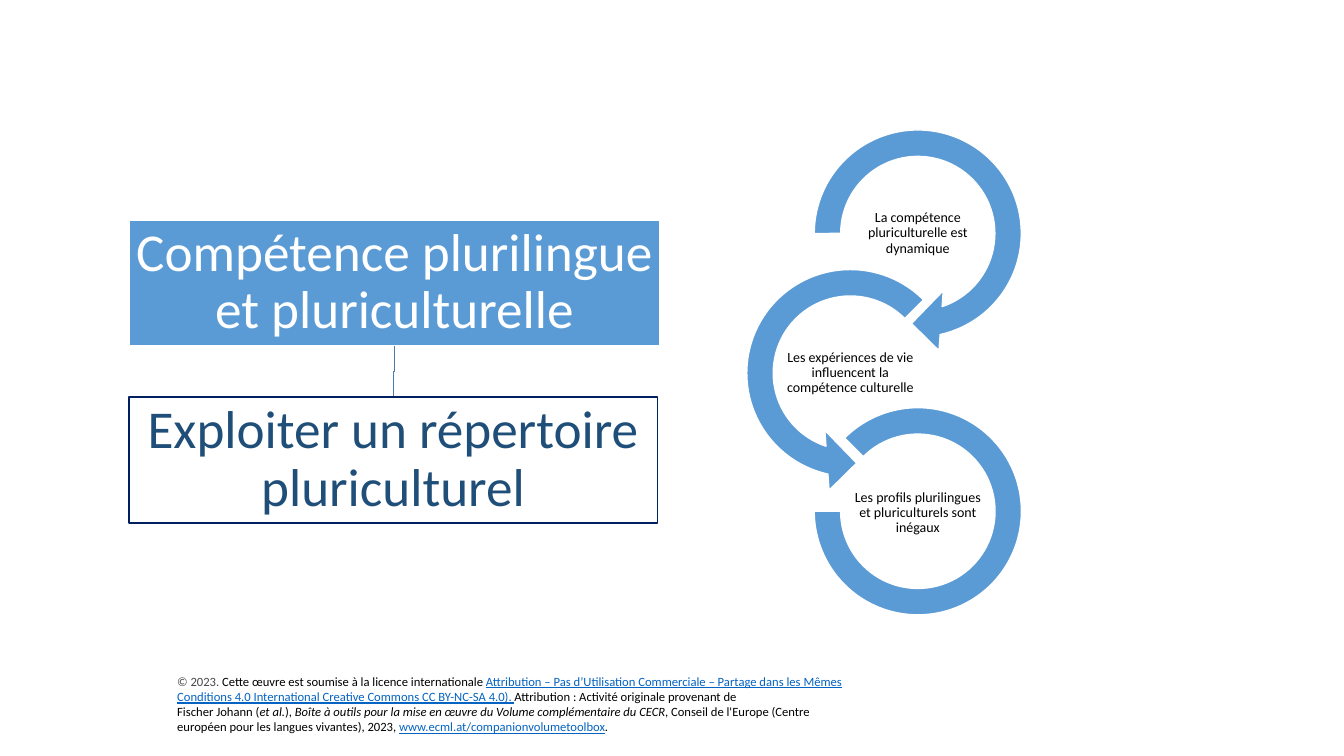
from lxml import etree
from pptx import Presentation
from pptx.dml.color import RGBColor
from pptx.enum.shapes import MSO_SHAPE as Preset
from pptx.enum.text import MSO_ANCHOR as Anchor, PP_ALIGN as Align
from pptx.util import Pt

BLUE = RGBColor(0x5B, 0x9B, 0xD5)
DARK_BLUE = RGBColor(0x1F, 0x4E, 0x79)
NAVY = RGBColor(0x00, 0x20, 0x60)
LINK_BLUE = RGBColor(0x05, 0x63, 0xC1)
LINE_BLUE = RGBColor(0x49, 0x7C, 0xAB)
GREY = RGBColor(0x46, 0x46, 0x46)
WHITE = RGBColor(0xFF, 0xFF, 0xFF)
BLACK = RGBColor(0x00, 0x00, 0x00)
FONT = "Calibri"

# text, top, width, fill, line, font colour
BOXES = [
    ("Compétence plurilingue et pluriculturelle", 157, 379.4, BLUE, WHITE, WHITE),
    ("Exploiter un répertoire pluriculturel", 283.7, 377.3, WHITE, NAVY, DARK_BLUE),
]
BOX_LEFT, BOX_HEIGHT = 92.2, 90

# text, preset, diameter, centre x, vertical shift, adjustments
RINGS = [
    ("La compétence pluriculturelle est dynamique",
     Preset.CIRCULAR_ARROW, 172, 655.6, 0, (0.1098, 11.42322, 45, 108, 0.125)),
    ("Les expériences de vie influencent la compétence culturelle",
     Preset.LEFT_CIRCULAR_ARROW, 172, 607.4, 0, (0.1098, 11.42322, 63, 189, 0.125)),
    ("Les profils plurilingues et pluriculturels sont inégaux",
     Preset.BLOCK_ARC, 148, 655.6, -1, (135, 108, 0.1274)),
]
RING_TOP_CENTRE, RING_STEP = 166.8, 99.7
LABEL_WIDTH, LABEL_HEIGHT = 95.8, 47.5

# paragraphs of (text, style)
LICENCE = [
    [("© 2023. ", "grey"),
     ("Cette œuvre est soumise à la licence internationale ", ""),
     ("Attribution – Pas d’Utilisation Commerciale – Partage dans les Mêmes "
      "Conditions 4.0 International Creative Commons CC BY-NC-SA 4.0). ", "link"),
     ("Attribution\u00a0: Activité originale provenant de", "")],
    [("Fischer Johann (", ""), ("et al.", "italic"), ("), ", ""),
     ("Boîte à outils pour la mise en œuvre du Volume complémentaire du CECR", "italic"),
     (", Conseil de l'Europe (Centre européen pour les langues vivantes), 2023, ", ""),
     ("www.ecml.at/companionvolumetoolbox", "link"), (".", "")],
]
STYLE_COLOURS = {"grey": GREY, "link": LINK_BLUE}


def style_shape(shape, fill, line):
    shape.shadow.inherit = False
    shape.fill.solid()
    shape.fill.fore_color.rgb = fill
    shape.line.color.rgb = line
    shape.line.width = Pt(1)


def write_centred(shape, text, size, colour, inset):
    frame = shape.text_frame
    frame.word_wrap = True
    frame.vertical_anchor = Anchor.MIDDLE
    frame.margin_left = frame.margin_right = Pt(inset)
    frame.margin_top = frame.margin_bottom = Pt(inset)
    frame.text = text
    paragraph = frame.paragraphs[0]
    paragraph.alignment = Align.CENTER
    paragraph.line_spacing = 0.9
    font = paragraph.runs[0].font
    font.name, font.size, font.color.rgb = FONT, Pt(size), colour


def add_licence(slide):
    box = slide.shapes.add_textbox(Pt(119.5), Pt(477.4), Pt(493.2), Pt(51.1))
    frame = box.text_frame
    frame.word_wrap = True
    frame.vertical_anchor = Anchor.MIDDLE
    for index, parts in enumerate(LICENCE):
        paragraph = frame.add_paragraph() if index else frame.paragraphs[0]
        for text, style in parts:
            run = paragraph.add_run()
            run.text = text
            font = run.font
            font.name, font.size = FONT, Pt(9)
            font.color.rgb = STYLE_COLOURS.get(style, BLACK)
            if style == "link":
                font.underline = True
            if style == "italic":
                font.italic = True


def add_hierarchy(slide):
    (_, top, upper_width, *_), (_, bottom, lower_width, *_) = BOXES
    upper_x = BOX_LEFT + upper_width / 2
    lower_x = BOX_LEFT + lower_width / 2
    start = top + BOX_HEIGHT
    bend = (start + bottom) / 2
    builder = slide.shapes.build_freeform(Pt(upper_x), Pt(start))
    builder.add_line_segments(
        [(Pt(upper_x), Pt(bend)), (Pt(lower_x), Pt(bend)), (Pt(lower_x), Pt(bottom))],
        close=False)
    link = builder.convert_to_shape()
    style_shape(link, WHITE, LINE_BLUE)
    link.fill.background()

    for text, top, width, fill, line, colour in BOXES:
        box = slide.shapes.add_shape(
            Preset.RECTANGLE, Pt(BOX_LEFT), Pt(top), Pt(width), Pt(BOX_HEIGHT))
        style_shape(box, fill, line)
        write_centred(box, text, 38, colour, 2)


def add_rings(slide):
    for index, (text, preset, diameter, x, shift, adjustments) in enumerate(RINGS):
        y = RING_TOP_CENTRE + index * RING_STEP
        ring = slide.shapes.add_shape(
            preset, Pt(x - diameter / 2), Pt(y + shift - diameter / 2),
            Pt(diameter), Pt(diameter))
        for position, value in enumerate(adjustments):
            ring.adjustments[position] = value
        style_shape(ring, BLUE, WHITE)
        label = slide.shapes.add_textbox(
            Pt(x - LABEL_WIDTH / 2), Pt(y - LABEL_HEIGHT / 2),
            Pt(LABEL_WIDTH), Pt(LABEL_HEIGHT))
        write_centred(label, text, 10, BLACK, 0.7)


def main():
    presentation = Presentation()
    presentation.slide_width, presentation.slide_height = Pt(960), Pt(540)
    slide = presentation.slides.add_slide(presentation.slide_layouts[6])
    add_licence(slide)
    add_hierarchy(slide)
    add_rings(slide)
    presentation.save("out.pptx")


if __name__ == "__main__":
    main()
